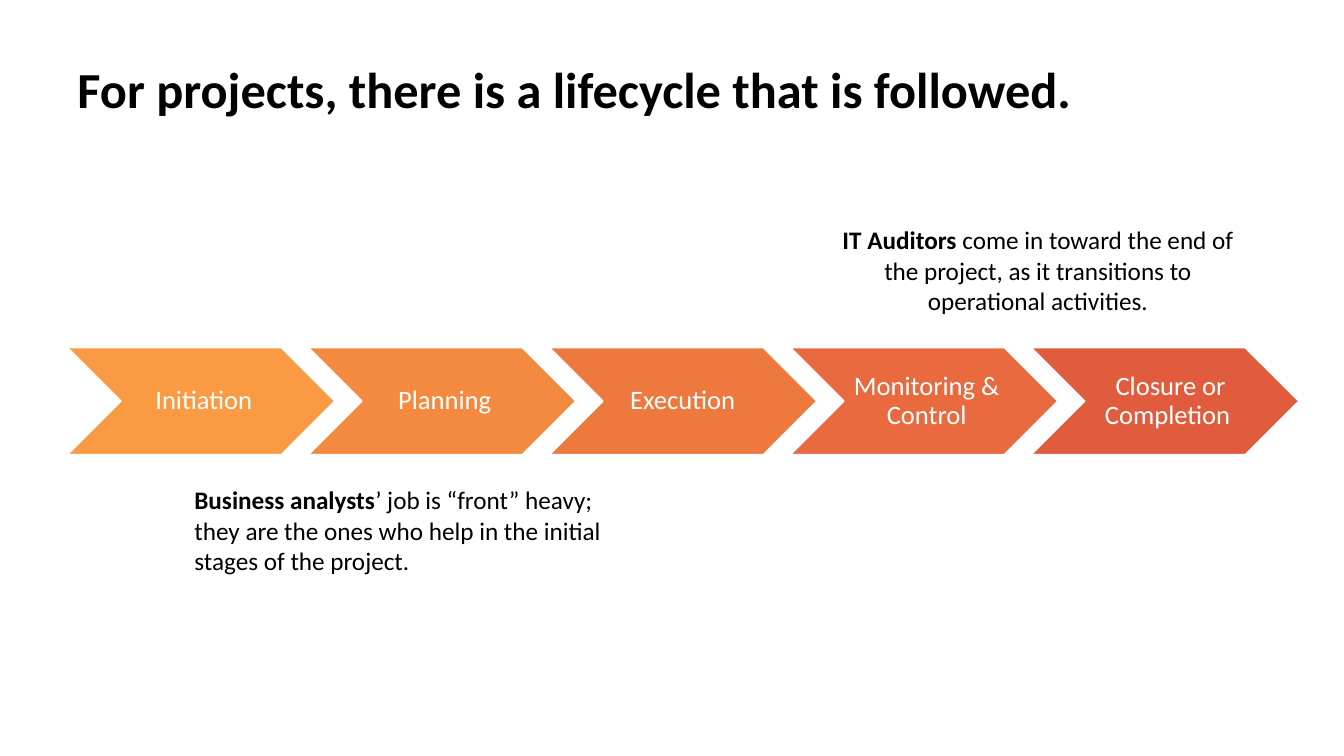
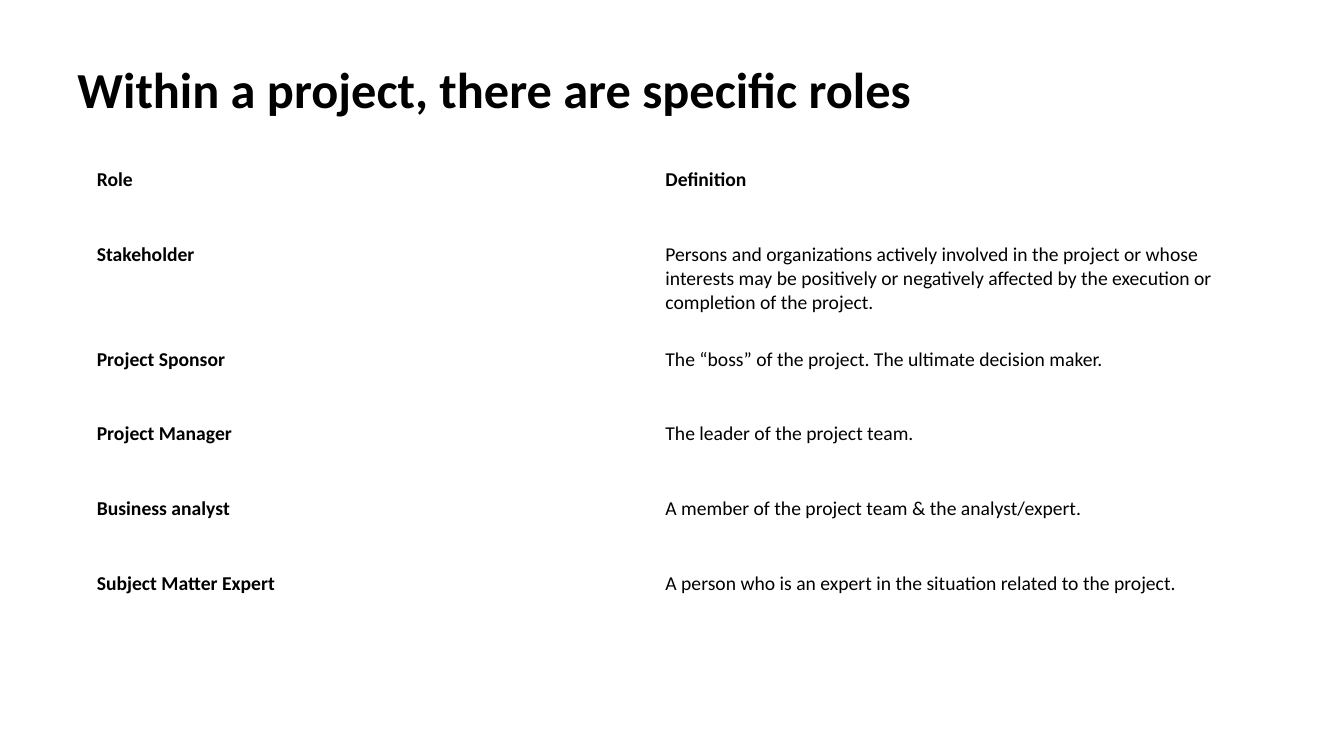
from pptx import Presentation
from pptx.dml.color import RGBColor
from pptx.enum import shapes, text
from pptx.util import Inches, Pt

THEME = {
    "font": "Calibri",
    "text": "000000",
    "light": "FFFFFF",
    "stages": ["FA9A42", "F48940", "EE793F", "E86A3E", "E15C3D"],
    "title_size": 36,
    "stage_size": 19,
    "note_size": 18,
    "table_size": 14,
}
LEFT, CENTER = text.PP_ALIGN.LEFT, text.PP_ALIGN.CENTER


def write(tf, runs, size, color=THEME["text"], align=LEFT, spacing=1.0):
    """Fill the first paragraph with (text, bold) runs."""
    tf.word_wrap = True
    p = tf.paragraphs[0]
    p.alignment, p.line_spacing = align, spacing
    for words, bold in runs:
        r = p.add_run()
        r.text = words
        r.font.color.rgb = RGBColor.from_string(color)
        style = {"name": THEME["font"], "size": Pt(size), "bold": bold}
        for name, value in style.items():
            setattr(r.font, name, value)


def add_titled_slide(title):
    s = prs.slides.add_slide(prs.slide_layouts[6])
    box = s.shapes.add_textbox(Inches(0.67), Inches(0.6), Inches(11.75), Inches(1.24))
    write(box.text_frame, [(title, True)], THEME["title_size"], spacing=0.9)
    return s


prs = Presentation()
prs.slide_width, prs.slide_height = Inches(13.33), Inches(7.5)

# Slide 1: project lifecycle
s = add_titled_slide("For projects, there is a lifecycle that is followed.")

# Chevron chain
stages = ["Initiation", "Planning", "Execution ", "Monitoring & Control", " Closure or Completion"]
stage_left, stage_pitch = 0.67, 2.39
stage_frame = {
    "vertical_anchor": text.MSO_ANCHOR.MIDDLE,
    "margin_left": Inches(0.08),
    "margin_top": Inches(0.03),
    "margin_right": Inches(0.03),
    "margin_bottom": Inches(0.03),
}
for i, (stage, fill) in enumerate(zip(stages, THEME["stages"])):
    sp = s.shapes.add_shape(shapes.MSO_SHAPE.CHEVRON, Inches(stage_left + i * stage_pitch),
                            Inches(3.45), Inches(2.65), Inches(1.06))
    sp.shadow.inherit = False
    sp.fill.solid()
    sp.fill.fore_color.rgb = RGBColor.from_string(fill)
    sp.line.color.rgb = RGBColor.from_string(THEME["light"])
    sp.line.width = Pt(1)
    for name, value in stage_frame.items():
        setattr(sp.text_frame, name, value)
    write(sp.text_frame, [(stage, False)], THEME["stage_size"], THEME["light"], CENTER, 0.9)

# Notes below and above the chain
notes = [
    (1.83, 4.76, LEFT, "Business analysts",
     "’ job is “front” heavy; they are the ones who help in the initial stages of the project."),
    (8.18, 2.18, CENTER, "IT Auditors ",
     "come in toward the end of the project, as it transitions to operational activities."),
]
for left, top, align, who, what in notes:
    box = s.shapes.add_textbox(Inches(left), Inches(top), Inches(4.23), Inches(1.01))
    write(box.text_frame, [(who, True), (what, False)], THEME["note_size"], align=align)

# Slide 2: project roles
s = add_titled_slide("Within a project, there are specific roles")

roles = [
    ("Role", "Definition"),
    ("Stakeholder", "Persons and organizations actively involved in the project or whose interests "
                    "may be positively or negatively affected by the execution or completion of the project."),
    ("Project Sponsor", "The “boss” of the project. The ultimate decision maker."),
    ("Project Manager", "The leader of the project team."),
    ("Business analyst", "A member of the project team & the analyst/expert."),
    ("Subject Matter Expert", "A person who is an expert in the situation related to the project."),
]
col_widths = [5.64, 5.73]
row_heights = [0.74, 1.04, 0.74, 0.74, 0.74, 0.74]
table = s.shapes.add_table(len(roles), len(col_widths), Inches(0.86), Inches(1.62),
                           Inches(sum(col_widths)), Inches(sum(row_heights))).table
table.horz_banding = False
for col, width in zip(table.columns, col_widths):
    col.width = Inches(width)
for i, (row, height) in enumerate(zip(table.rows, row_heights)):
    row.height = Inches(height)
    for j, cell in enumerate(row.cells):
        cell.fill.background()
        write(cell.text_frame, [(roles[i][j], i == 0 or j == 0)], THEME["table_size"])

prs.save("out.pptx")
